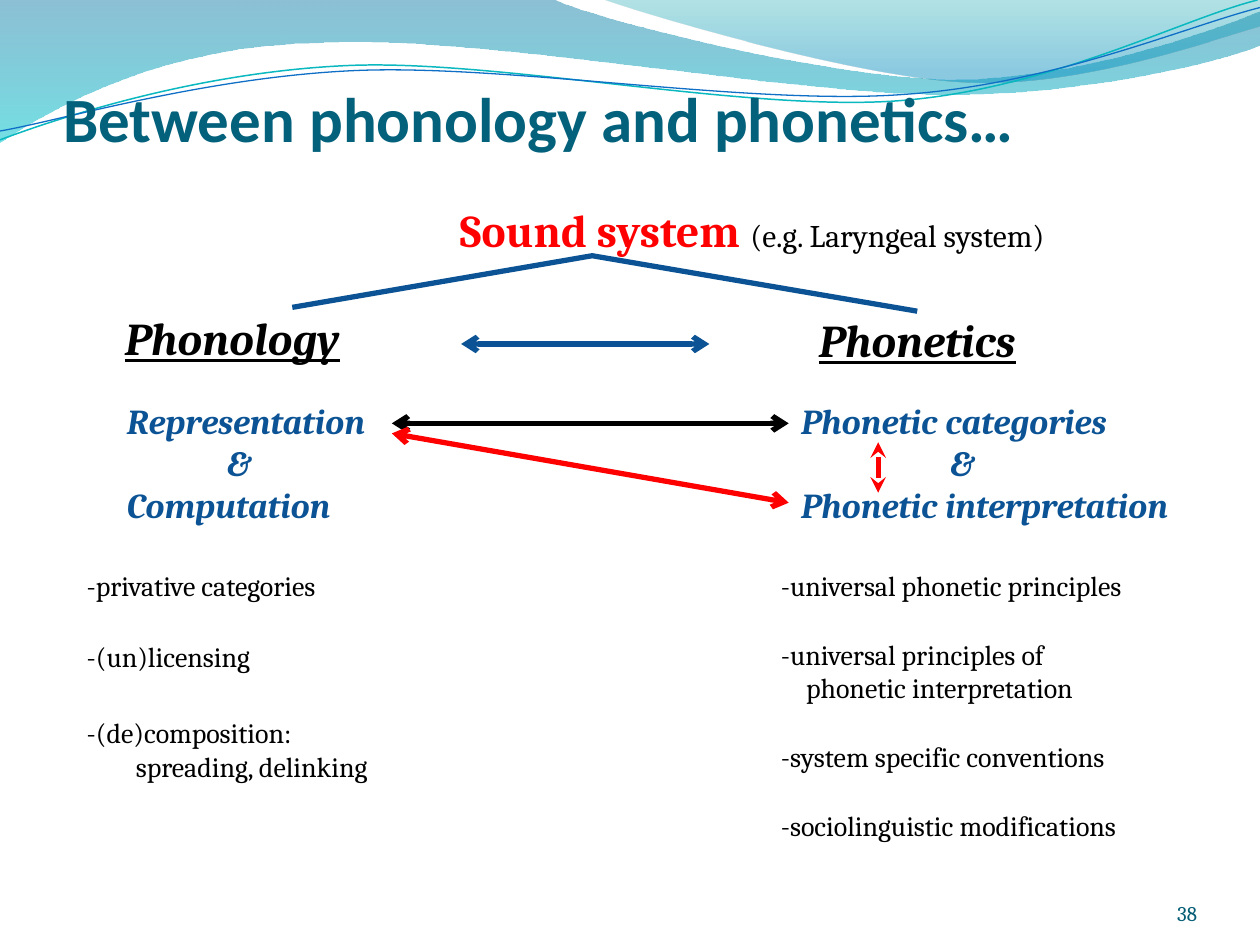
from lxml.etree import SubElement
from pptx import Presentation
from pptx.dml.color import RGBColor
from pptx.enum.shapes import MSO_CONNECTOR
from pptx.enum.text import MSO_ANCHOR, MSO_AUTO_SIZE, PP_ALIGN
from pptx.oxml.ns import qn
from pptx.util import Inches, Pt

BLACK = RGBColor(0x00, 0x00, 0x00)
RED = RGBColor(0xFF, 0x00, 0x00)
BLUE = RGBColor(0x0B, 0x53, 0x94)
TITLE = RGBColor(0x04, 0x61, 0x7B)
NUMBER = RGBColor(0x04, 0x5D, 0x75)
BAND_BLUE, BAND_CYAN = RGBColor(0x00, 0x74, 0xA1), RGBColor(0x00, 0xC6, 0xCF)
CAP_TEAL, CAP_BLUE = RGBColor(0x00, 0xA1, 0xA9), RGBColor(0x00, 0x8B, 0xBF)
WAVE_CYAN, WAVE_BLUE = RGBColor(0x0A, 0xB8, 0xBF), RGBColor(0x0F, 0x6F, 0xC6)

# Columns of the slide, in inches
LEFT_LIST, RIGHT_LIST = 0.59, 6.1
LEFT_HEAD, RIGHT_HEAD = 0.91, 6.26
LIST_TOP = 4.46


def add_outline(slide, start, segments, close=False):
    """Freeform of straight (2 numbers) and Bezier (6 numbers) segments."""
    points = [(Inches(seg[i]), Inches(seg[i + 1]))
              for seg in segments for i in range(0, len(seg), 2)]
    builder = slide.shapes.build_freeform(*map(Inches, start))
    builder.add_line_segments(points, close=close)
    sp = builder.convert_to_shape()
    sp.shadow.inherit = False
    # Join the three steps of each Bezier segment into one curve
    steps = iter(list(sp._element.iter(qn("a:lnTo"))))
    for seg in segments:
        step = next(steps)
        if len(seg) == 6:
            step.tag = qn("a:cubicBezTo")
            for _ in range(2):
                control = next(steps)
                step.append(control[0])
                control.getparent().remove(control)
    return sp


def add_stroke(slide, start, segments, color, width):
    sp = add_outline(slide, start, segments)
    sp.fill.background()
    sp.line.color.rgb = color
    sp.line.width = Pt(width)


def add_band(slide, start, segments, stops):
    """Closed band with a vertical gradient; stops are (position, colour, opacity %)."""
    sp = add_outline(slide, start, segments, close=True)
    sp.line.fill.background()
    sp.fill.gradient()
    sp.fill.gradient_angle = 270
    for stop, (position, color, _) in zip(sp.fill.gradient_stops, stops):
        stop.position = position
        stop.color.rgb = color
    for clr, (_, _, opacity) in zip(sp._element.spPr.iter(qn("a:srgbClr")), stops):
        SubElement(clr, qn("a:alpha")).set("val", str(opacity * 1000))


def add_arrow(slide, start, end, color, head="arrow"):
    ends = [Inches(v) for v in (*start, *end)]
    cx = slide.shapes.add_connector(MSO_CONNECTOR.STRAIGHT, *ends)
    cx.line.color.rgb = color
    cx.line.width = Pt(3)
    ln = cx.line._get_or_add_ln()
    for tag in ("a:headEnd", "a:tailEnd"):
        SubElement(ln, qn(tag)).set("type", head)
    SubElement(cx._element.spPr, qn("a:effectLst"))


def style(r, size, color, bold=False, italic=False, underline=False, font="Cambria"):
    f = r.font
    f.name, f.size, f.color.rgb = font, Pt(size), color
    f.bold, f.italic, f.underline = bold, italic, underline


def indent_left(p, inches):
    p._p.get_or_add_pPr().set("marL", str(Inches(inches)))


def place(sp, left, top, width, height):
    sp.left, sp.top, sp.width, sp.height = map(Inches, (left, top, width, height))


def add_text(slide, box, lines, size, color, indents=(), **look):
    """Text box, one paragraph a line; indents are inches per line."""
    sp = slide.shapes.add_textbox(*map(Inches, box))
    tf = sp.text_frame
    tf.word_wrap = True
    tf.text = "\n".join(lines)
    for p in tf.paragraphs:
        style(p.runs[0], size, color, **look)
    for p, indent in zip(tf.paragraphs, indents):
        indent_left(p, indent)
    return sp


def add_list(slide, left, items):
    for top, lines, indent in items:
        box = (left, top, 3.07, 0.1 + 0.27 * len(lines))
        add_text(slide, box, lines, 16, BLACK, (0, indent))


def add_waves(slide):
    add_band(slide, (0, 0),
             [(4.4, 0), (4.76, 0.17, 6.64, 0.63, 7.58, 0.63),
              (8.53, 0.63, 9.58, 0.26, 10, 0.09), (10, 0.36),
              (9.83, 0.44, 8.7, 0.76, 7.46, 0.75), (6.22, 0.75, 3.82, 0.28, 2.57, 0.34),
              (1.29, 0.36, 0.46, 0.83, 0, 1.13)],
             [(0, BAND_BLUE, 45), (1, BAND_CYAN, 55)])
    add_band(slide, (4.79, 0),
             [(5.09, 0.11, 6.82, 0.62, 7.69, 0.65),
              (8.56, 0.69, 9.61, 0.32, 10, 0.21), (10, 0)],
             [(0, CAP_TEAL, 30), (0.8, CAP_BLUE, 45)])
    add_stroke(slide, (0, 1.11),
               [(0.48, 0.93, 1.58, 0.57, 2.77, 0.52), (3.95, 0.47, 5.93, 0.89, 7.13, 0.8),
                (8.33, 0.71, 9.38, 0.15, 9.98, 0)], WAVE_CYAN, 0.85)
    add_stroke(slide, (0, 1.04),
               [(0.47, 0.96, 1.64, 0.61, 2.83, 0.56), (4.03, 0.51, 5.97, 0.84, 7.17, 0.75),
                (8.36, 0.67, 9.41, 0.21, 10, 0.06)], WAVE_BLUE, 0.75)


def fill_title(sp):
    place(sp, 0.5, 0.52, 9, 0.71)
    tf = sp.text_frame
    tf.text = "Between phonology and phonetics…"
    tf.vertical_anchor = MSO_ANCHOR.BOTTOM
    tf.margin_left = tf.margin_right = tf.margin_bottom = 0
    tf.auto_size = MSO_AUTO_SIZE.NONE
    tf.paragraphs[0].alignment = PP_ALIGN.LEFT
    style(tf.paragraphs[0].runs[0], 36, TITLE, bold=True, font="Calibri")


def fill_body(sp, half):
    """System name, and below it the name of its first half."""
    place(sp, 0.5, 1.55, 9, 5.37)
    tf = sp.text_frame
    tf.auto_size = MSO_AUTO_SIZE.NONE
    rows = [
        (0, 3.05, [("Sound system ", dict(size=26, color=RED, bold=True)),
                   ("(e.g. Laryngeal system)", dict(size=18, color=BLACK))]),
        (31, 0.39, [("Phonology", half)]),
    ]
    for i, (space, indent, runs) in enumerate(rows):
        p = tf.add_paragraph() if i else tf.paragraphs[0]
        p.space_before = Pt(space)
        indent_left(p, indent)
        pPr = p._p.get_or_add_pPr()
        pPr.set("indent", "0")
        SubElement(pPr, qn("a:buNone"))
        for text, look in runs:
            r = p.add_run()
            r.text = text
            style(r, **look)


def main():
    prs = Presentation()
    prs.slide_width, prs.slide_height = Inches(10), Inches(7.5)
    slide = prs.slides.add_slide(prs.slide_layouts[1])
    title, body = slide.placeholders

    # Waves behind the title and body
    add_waves(slide)
    for sp in (title, body):
        slide.shapes._spTree.append(sp._element)
    half = dict(size=26, color=BLACK, bold=True, italic=True, underline=True)
    fill_title(title)
    fill_body(body, half)
    add_text(slide, (6.4, 2.43, 2, 0.52), ["Phonetics"], **half)

    # Branches and the link between the two halves
    add_stroke(slide, (2.32, 2.44), [(4.7, 2.03), (7.28, 2.47)], BLUE, 3)
    add_arrow(slide, (3.66, 2.73), (5.63, 2.73), BLUE)

    # Components of each half
    for left, width, indent, lines in [
        (LEFT_HEAD, 2.36, 0.79, ["Representation", "&", "Computation"]),
        (RIGHT_HEAD, 3.39, 1.18, ["Phonetic categories", "&", "Phonetic interpretation"]),
    ]:
        add_text(slide, (left, 3.12, width, 1.11), lines, 20, BLUE,
                 (0, indent, 0), bold=True, italic=True)
    add_arrow(slide, (3.11, 3.36), (RIGHT_HEAD, 3.36), BLACK)
    add_arrow(slide, (3.11, 3.44), (RIGHT_HEAD, 3.99), RED)
    add_arrow(slide, (6.97, 3.91), (6.97, 3.51), RED, "stealth")

    # Details of each half
    add_list(slide, LEFT_LIST, [
        (LIST_TOP, ["-privative categories"], 0),
        (5.03, ["-(un)licensing"], 0),
        (5.63, ["-(de)composition:", "spreading, delinking"], 0.39)])
    add_list(slide, RIGHT_LIST, [
        (LIST_TOP, ["-universal phonetic principles"], 0),
        (5.01, ["-universal principles of", "phonetic interpretation"], 0.2),
        (5.82, ["-system specific conventions"], 0),
        (6.37, ["-sociolinguistic modifications"], 0)])

    # Slide number
    tf = add_text(slide, (8.67, 6.95, 0.83, 0.4), ["38"], 12, NUMBER).text_frame
    tf.margin_left = tf.margin_right = tf.margin_top = tf.margin_bottom = 0
    tf.vertical_anchor = MSO_ANCHOR.BOTTOM
    tf.paragraphs[0].alignment = PP_ALIGN.RIGHT

    prs.save("out.pptx")


if __name__ == "__main__":
    main()
